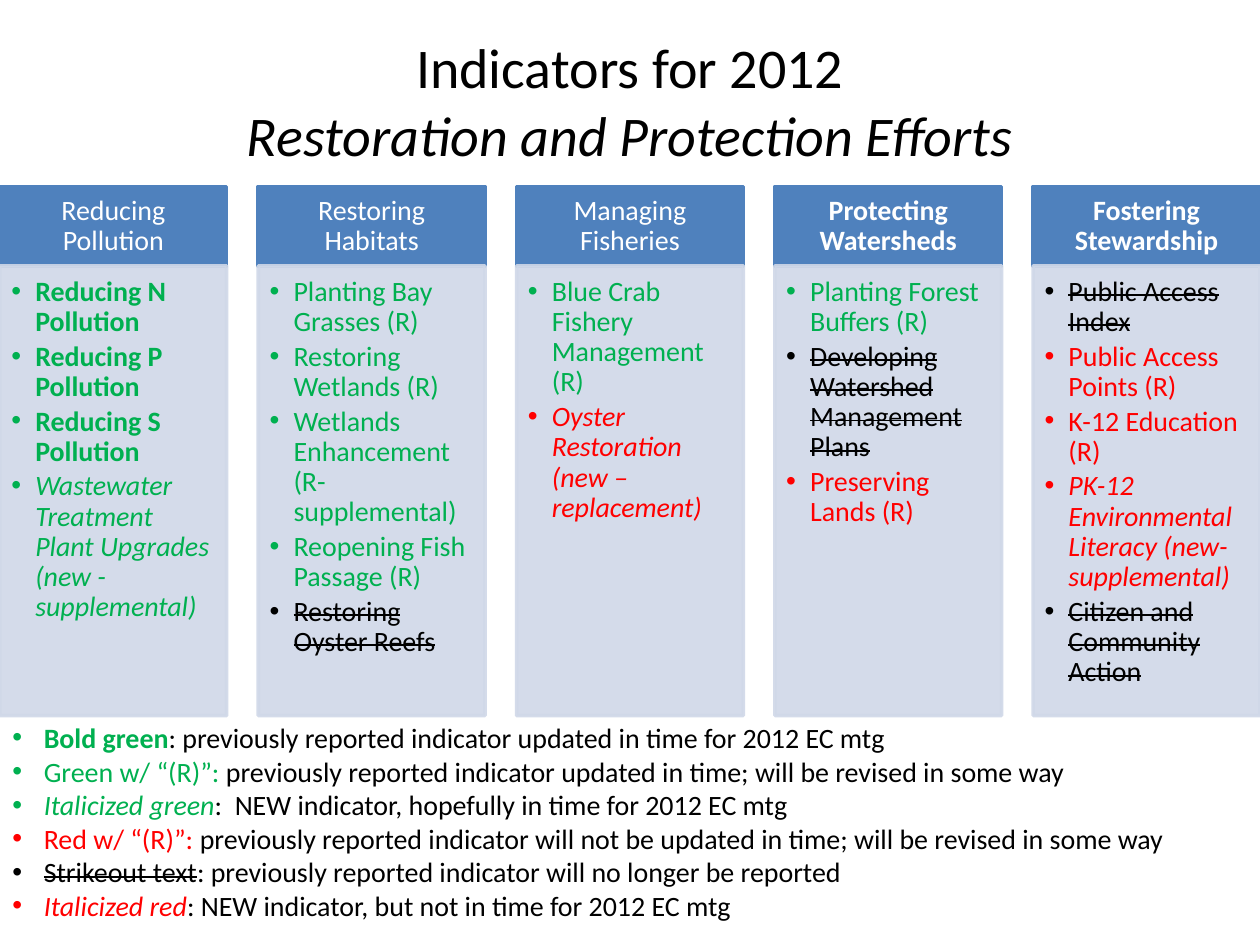
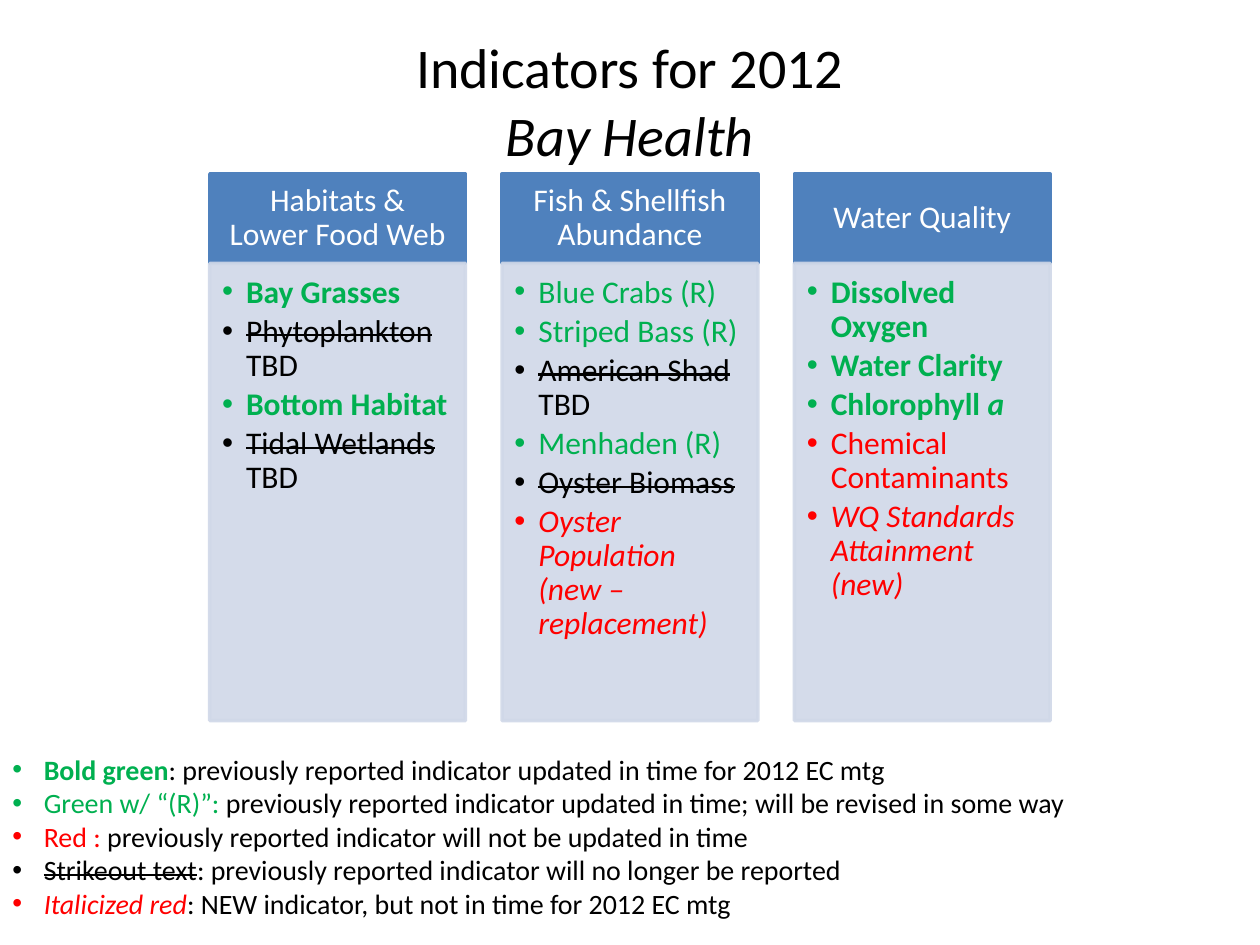
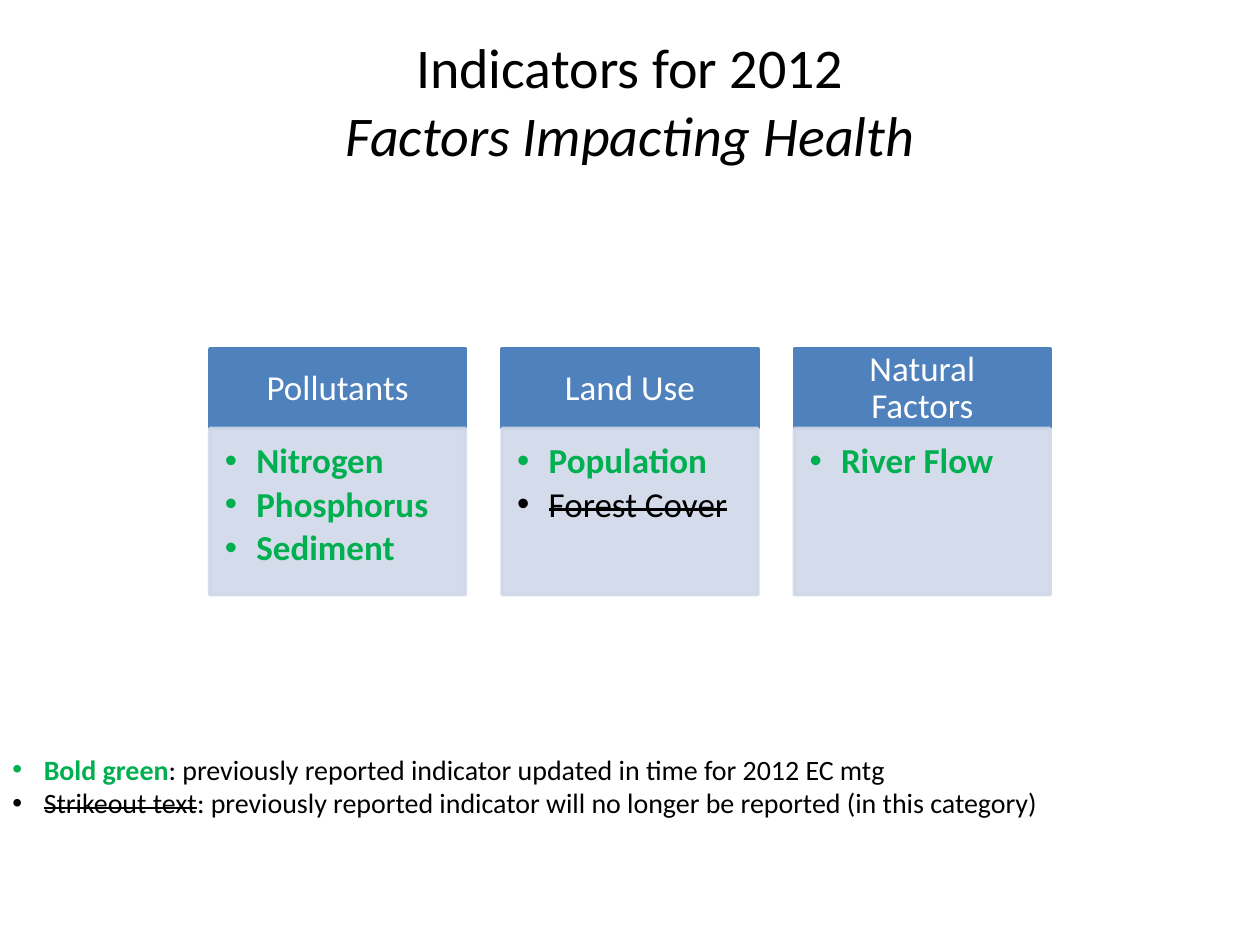
from dataclasses import dataclass
from typing import NamedTuple

from lxml.etree import SubElement
from pptx import Presentation
from pptx.dml.color import RGBColor
from pptx.enum.shapes import MSO_SHAPE
from pptx.enum.text import MSO_ANCHOR as ANCHOR, MSO_AUTO_SIZE as AUTO_SIZE, PP_ALIGN as ALIGN
from pptx.oxml.ns import qn
from pptx.util import Inches, Pt


@dataclass(frozen=True)
class Theme:
    font: str = "Calibri"
    black: str = "000000"
    white: str = "FFFFFF"
    green: str = "00B050"
    red: str = "FF0000"
    header: str = "4F81BD"
    panel: str = "D0D8E8"
    panel_opacity: int = 90
    outline: int = 2
    title_size: int = 32
    legend_size: int = 16
    line_spacing: float = 0.9
    bullet_gap: float = 0.16  # share of the type size


THEME = Theme()
SLIDE_WIDTH, SLIDE_HEIGHT = 10, 7.5


class Mark(NamedTuple):
    color: str = THEME.black
    bold: bool = False
    italic: bool = False
    strike: bool = False


PLAIN = Mark()
UPDATED = Mark(THEME.green, bold=True)
REVISED = Mark(THEME.green)
NEW = Mark(THEME.green, italic=True)
LATE = Mark(THEME.red)
NEW_LATE = Mark(THEME.red, italic=True)
DROPPED = Mark(strike=True)
HEADING = Mark(THEME.white)
BOLD_HEADING = Mark(THEME.white, bold=True)


@dataclass(frozen=True)
class Grid:
    """Geometry in inches and type size of a row of indicator columns."""
    top: float
    width: float
    gap: float
    header_height: float
    panel_height: float
    size: int
    header_insets: tuple
    panel_insets: tuple
    indent: float

    def left(self, index, count):
        row_width = count * self.width + (count - 1) * self.gap
        return (SLIDE_WIDTH - row_width) / 2 + index * (self.width + self.gap)


class Column(NamedTuple):
    heading: str
    indicators: list
    heading_mark: Mark = HEADING


EFFORTS_GRID = Grid(1.48, 1.8, 0.25, 0.63, 3.57, 16,
                    (0.12, 0.07, 0.12, 0.07), (0.09, 0.09, 0.12, 0.14), 0.19)
HEALTH_GRID = Grid(1.38, 2.03, 0.29, 0.71, 3.63, 18,
                   (0.14, 0.08, 0.14, 0.08), (0.1, 0.1, 0.14, 0.16), 0.19)
FACTORS_GRID = Grid(2.77, 2.03, 0.29, 0.63, 1.32, 20,
                    (0.16, 0.09, 0.16, 0.09), (0.12, 0.12, 0.16, 0.17), 0.25)

# Every bullet is a list of (text, mark) parts.
EFFORTS = [
    Column("Reducing Pollution", [
        [("Reducing N Pollution", UPDATED)],
        [("Reducing P Pollution", UPDATED)],
        [("Reducing S Pollution", UPDATED)],
        [("Wastewater Treatment Plant Upgrades (new - supplemental)", NEW)],
    ]),
    Column("Restoring Habitats", [
        [("Planting Bay Grasses (R)", REVISED)],
        [("Restoring Wetlands (R)", REVISED)],
        [("Wetlands Enhancement (R- supplemental)", REVISED)],
        [("Reopening Fish Passage (R)", REVISED)],
        [("Restoring Oyster Reefs", DROPPED)],
    ]),
    Column("Managing Fisheries", [
        [("Blue Crab Fishery Management (R)", REVISED)],
        [("Oyster Restoration (new – replacement)", NEW_LATE)],
    ]),
    Column("Protecting Watersheds", [
        [("Planting Forest Buffers (R)", REVISED)],
        [("Developing Watershed Management Plans", DROPPED)],
        [("Preserving Lands (R)", LATE)],
    ], BOLD_HEADING),
    Column("Fostering Stewardship", [
        [("Public Access Index", DROPPED)],
        [("Public Access Points (R)", LATE)],
        [("K-12 Education (R)", LATE)],
        [("PK-12 Environmental Literacy (new- supplemental)", NEW_LATE)],
        [("Citizen and Community Action", DROPPED)],
    ], BOLD_HEADING),
]

HEALTH = [
    Column("Habitats & Lower Food Web", [
        [("Bay Grasses", UPDATED)],
        [("Phytoplankton ", DROPPED), ("TBD", PLAIN)],
        [("Bottom Habitat", UPDATED)],
        [("Tidal Wetlands ", DROPPED), ("TBD", PLAIN)],
    ]),
    Column("Fish & Shellfish Abundance", [
        [("Blue Crabs (R)", REVISED)],
        [("Striped Bass (R)", REVISED)],
        [("American Shad ", DROPPED), ("TBD", PLAIN)],
        [("Menhaden (R)", REVISED)],
        [("Oyster Biomass", DROPPED)],
        [("Oyster Population (new – replacement)", NEW_LATE)],
    ]),
    Column("Water Quality", [
        [("Dissolved Oxygen", UPDATED)],
        [("Water Clarity", UPDATED)],
        [("Chlorophyll ", UPDATED), ("a", UPDATED._replace(italic=True))],
        [("Chemical Contaminants", LATE)],
        [("WQ Standards Attainment (new)", NEW_LATE)],
    ]),
]

FACTORS = [
    Column("Pollutants", [
        [("Nitrogen", UPDATED)],
        [("Phosphorus", UPDATED)],
        [("Sediment", UPDATED)],
    ]),
    Column("Land Use", [
        [("Population", UPDATED)],
        [("Forest Cover", DROPPED)],
    ]),
    Column("Natural Factors", [[("River Flow", UPDATED)]]),
]

KEY_UPDATED = [("Bold green", UPDATED),
               (": previously reported indicator updated in time for 2012 EC mtg", PLAIN)]
KEY_REVISED = [("Green w/ “(R)”: ", REVISED),
               ("previously reported indicator updated in time; will be revised in some way", PLAIN)]
KEY_NEW = [("Italicized green", NEW),
           (":  NEW indicator, hopefully in time for 2012 EC mtg", PLAIN)]
KEY_LATE_REVISED = [("Red w/ “(R)”: ", LATE),
                    ("previously reported indicator will not be updated in time; "
                     "will be revised in some way", PLAIN)]
KEY_LATE = [("Red : ", LATE),
            ("previously reported indicator will not be updated in time", PLAIN)]
KEY_DROPPED = [("Strikeout text", DROPPED),
               (": previously reported indicator will no longer be reported", PLAIN)]
KEY_MOVED = [KEY_DROPPED[0], (KEY_DROPPED[1][0] + " (in this category)", PLAIN)]
KEY_NEW_LATE = [("Italicized red", NEW_LATE),
                (": NEW indicator, but not in time for 2012 EC mtg", PLAIN)]


def format_run(run, mark, size):
    font = run.font
    font.name, font.size = THEME.font, Pt(size)
    font.bold, font.italic = mark.bold, mark.italic
    font.color.rgb = RGBColor.from_string(mark.color)
    if mark.strike:
        font._element.set("strike", "sngStrike")


def add_bullet(paragraph, indent):
    props = paragraph._p.get_or_add_pPr()
    props.set("marL", str(Inches(indent)))
    props.set("indent", str(-Inches(indent)))
    SubElement(props, qn("a:buFont"), typeface="Arial")
    SubElement(props, qn("a:buChar"), char="•")


def write_bullets(frame, bullets, size, indent, line_spacing=1.0, gap=0):
    for index, parts in enumerate(bullets):
        paragraph = frame.add_paragraph() if index else frame.paragraphs[0]
        paragraph.alignment = ALIGN.LEFT
        paragraph.line_spacing = line_spacing
        paragraph.space_after = Pt(gap)
        add_bullet(paragraph, indent)
        for text, mark in parts:
            run = paragraph.add_run()
            run.text = text
            format_run(run, mark, size)


def add_block(slide, left, top, width, height, color, insets, anchor, opacity=100):
    """Add a filled rectangle and return its text frame."""
    block = slide.shapes.add_shape(MSO_SHAPE.RECTANGLE, Inches(left), Inches(top),
                                   Inches(width), Inches(height))
    block.shadow.inherit = False
    block.line.width = Pt(THEME.outline)
    for fill in (block.fill, block.line.fill):
        fill.solid()
        fill.fore_color.rgb = RGBColor.from_string(color)
    if opacity < 100:
        for tint in block._element.spPr.iter(qn("a:srgbClr")):
            SubElement(tint, qn("a:alpha"), val=str(opacity * 1000))
    frame = block.text_frame
    frame.word_wrap = True
    frame.vertical_anchor = anchor
    (frame.margin_left, frame.margin_top,
     frame.margin_right, frame.margin_bottom) = map(Inches, insets)
    return frame


def add_column(slide, grid, left, column):
    heading = add_block(slide, left, grid.top, grid.width, grid.header_height,
                        THEME.header, grid.header_insets, ANCHOR.MIDDLE)
    heading.text = column.heading
    line = heading.paragraphs[0]
    line.alignment = ALIGN.CENTER
    line.line_spacing = THEME.line_spacing
    format_run(line.runs[0], column.heading_mark, grid.size)

    panel = add_block(slide, left, grid.top + grid.header_height, grid.width,
                      grid.panel_height, THEME.panel, grid.panel_insets,
                      ANCHOR.TOP, THEME.panel_opacity)
    write_bullets(panel, column.indicators, grid.size, grid.indent,
                  THEME.line_spacing, THEME.bullet_gap * grid.size)


def add_title(slide, topic):
    title = slide.shapes.title
    title.left, title.top = Inches(0.5), Inches(0.17)
    title.width, title.height = Inches(9), Inches(1.25)
    frame = title.text_frame
    frame.auto_size = AUTO_SIZE.NONE
    frame.vertical_anchor = ANCHOR.MIDDLE
    line = frame.paragraphs[0]
    line.text = f"Indicators for 2012\v{topic}"
    line.alignment = ALIGN.CENTER
    for run, mark in zip(line.runs, (PLAIN, Mark(italic=True))):
        format_run(run, mark, THEME.title_size)


def add_legend(slide, top, height, keys):
    legend = slide.shapes.add_textbox(0, Inches(top), Inches(SLIDE_WIDTH), Inches(height))
    legend.text_frame.word_wrap = True
    legend.text_frame.auto_size = AUTO_SIZE.SHAPE_TO_FIT_TEXT
    write_bullets(legend.text_frame, keys, THEME.legend_size, 0.25)


def add_indicator_slide(prs, topic, grid, columns, legend_top, legend_height, keys):
    slide = prs.slides.add_slide(prs.slide_layouts.get_by_name("Title Only"))
    add_title(slide, topic)
    for index, column in enumerate(columns):
        add_column(slide, grid, grid.left(index, len(columns)), column)
    add_legend(slide, legend_top, legend_height, keys)


def set_master_title_size(prs):
    """Give line breaks in titles the same size as the title text."""
    title_style = prs.slide_master.element.find(".//" + qn("p:titleStyle"))
    for defaults in title_style.iter(qn("a:defRPr")):
        defaults.set("sz", str(THEME.title_size * 100))


def main():
    prs = Presentation()
    prs.slide_width, prs.slide_height = Inches(SLIDE_WIDTH), Inches(SLIDE_HEIGHT)
    set_master_title_size(prs)
    add_indicator_slide(prs, "Restoration and Protection Efforts", EFFORTS_GRID, EFFORTS,
                        5.67, 1.99, [KEY_UPDATED, KEY_REVISED, KEY_NEW,
                                     KEY_LATE_REVISED, KEY_DROPPED, KEY_NEW_LATE])
    add_indicator_slide(prs, "Bay Health", HEALTH_GRID, HEALTH,
                        5.92, 1.72, [KEY_UPDATED, KEY_REVISED, KEY_LATE,
                                     KEY_DROPPED, KEY_NEW_LATE])
    add_indicator_slide(prs, "Factors Impacting Health", FACTORS_GRID, FACTORS,
                        5.92, 0.64, [KEY_UPDATED, KEY_MOVED])
    prs.save("out.pptx")


if __name__ == "__main__":
    main()
